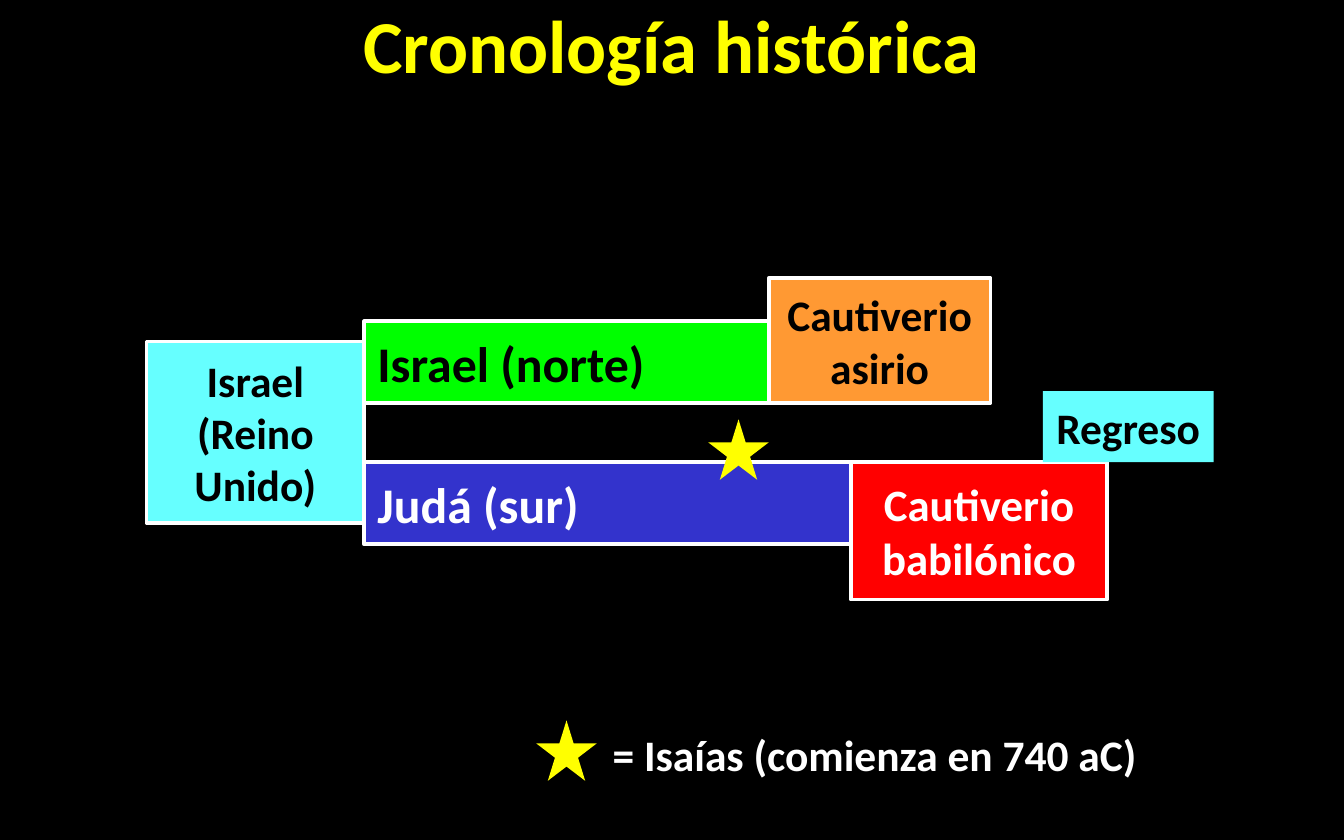
"""Build a slide with the timeline of Israel and Judah."""
from pptx import Presentation
from pptx.dml.color import RGBColor
from pptx.enum.shapes import MSO_SHAPE
from pptx.enum.text import MSO_ANCHOR, PP_ALIGN
from pptx.util import Inches, Pt

THEME = {
    "font": "Calibri",
    "black": "000000", "white": "FFFFFF", "yellow": "FFFF00", "green": "00FF00",
    "blue": "3333CC", "orange": "FF9933", "red": "FF0000", "cyan": "66FFFF",
    "title": 40, "kingdom": 26.7, "captivity": 24, "label": 23.3, "border": 2,
}
TITLE = ("Cronología histórica", (0.96, 0, 8.07, 0.65))
LEGEND = ("= Isaías (comienza en 740 aC)", (4.46, 5.37, 4.44, 0.49))
LEFT, CENTER = PP_ALIGN.LEFT, PP_ALIGN.CENTER
PERIODS = [
    ("Israel (norte)", (2.71, 2.39, 3.01, 0.61), "green", "black", "kingdom", LEFT, True),
    ("Judá (sur)", (2.71, 3.44, 4.17, 0.61), "blue", "white", "kingdom", LEFT, True),
    ("Cautiverio asirio", (5.72, 2.07, 1.65, 0.93), "orange", "black", "label", CENTER, True),
    ("Cautiverio babilónico", (6.33, 3.44, 1.91, 1.02), "red", "white", "captivity", CENTER, True),
    ("Israel (Reino Unido)", (1.09, 2.54, 1.62, 1.35), "cyan", "black", "label", CENTER, True),
    ("Regreso", (7.76, 2.91, 1.27, 0.53), "cyan", "black", "label", CENTER, False),
]
STAR_SIZE = 0.45
STARS = [(5.27, 3.12), (3.99, 5.36)]


def color(name):
    return RGBColor.from_string(THEME[name])


def box(lengths):
    return [Inches(n) for n in lengths]


def write(sp, text, size, ink, align, anchor=MSO_ANCHOR.MIDDLE, wrap=True):
    tf = sp.text_frame
    tf.word_wrap = wrap
    tf.vertical_anchor = anchor
    p = tf.paragraphs[0]
    p.alignment = align
    r = p.add_run()
    r.text = text
    r.font.name = THEME["font"]
    r.font.size = Pt(THEME[size])
    r.font.bold = True
    r.font.color.rgb = color(ink)


def add_filled(s, kind, place, fill, bordered=False):
    sp = s.shapes.add_shape(kind, *box(place))
    sp.shadow.inherit = False
    sp.fill.solid()
    sp.fill.fore_color.rgb = color(fill)
    if bordered:
        sp.line.color.rgb = color("white")
        sp.line.width = Pt(THEME["border"])
    else:
        sp.line.fill.background()
    return sp


def main():
    prs = Presentation()
    prs.slide_width, prs.slide_height = Inches(10), Inches(6.25)
    s = prs.slides.add_slide(prs.slide_layouts[5])
    s.background.fill.solid()
    s.background.fill.fore_color.rgb = color("black")

    text, place = TITLE
    title = s.shapes.title
    title.left, title.top, title.width, title.height = box(place)
    write(title, text, "title", "yellow", CENTER)

    for text, place, fill, ink, size, align, bordered in PERIODS:
        sp = add_filled(s, MSO_SHAPE.RECTANGLE, place, fill, bordered)
        write(sp, text, size, ink, align, wrap=bordered)

    for left, top in STARS:
        add_filled(s, MSO_SHAPE.STAR_5_POINT, (left, top, STAR_SIZE, STAR_SIZE), "yellow")

    text, place = LEGEND
    write(s.shapes.add_textbox(*box(place)), text, "label", "white", LEFT, MSO_ANCHOR.TOP)
    prs.save("out.pptx")


if __name__ == "__main__":
    main()
